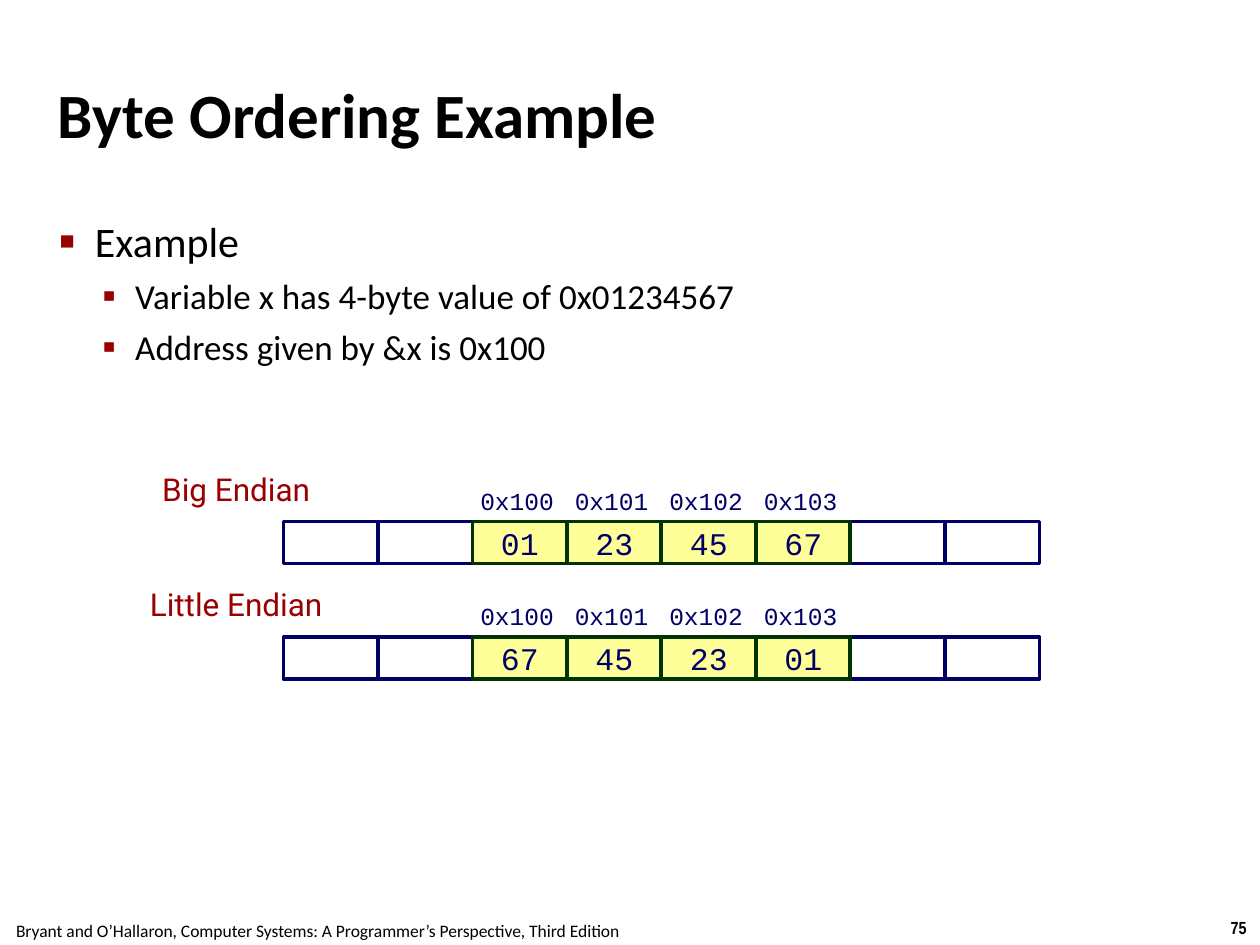
from lxml import etree
from pptx import Presentation
from pptx.dml.color import RGBColor
from pptx.enum.shapes import MSO_SHAPE
from pptx.enum.text import MSO_ANCHOR, MSO_AUTO_SIZE, PP_ALIGN
from pptx.oxml.ns import qn
from pptx.util import Pt

RECTANGLE = MSO_SHAPE.RECTANGLE
TOP, MIDDLE = MSO_ANCHOR.TOP, MSO_ANCHOR.MIDDLE
LEFT, CENTER = PP_ALIGN.LEFT, PP_ALIGN.CENTER
NO_FIT = MSO_AUTO_SIZE.NONE

BLACK = RGBColor(0x00, 0x00, 0x00)
WHITE = RGBColor(0xFF, 0xFF, 0xFF)
NAVY = RGBColor(0x00, 0x00, 0x66)
GREEN = RGBColor(0x00, 0x33, 0x00)
YELLOW = RGBColor(0xFF, 0xFF, 0x99)
BULLET_RED = RGBColor(0x99, 0x00, 0x00)
LABEL_RED = RGBColor(0x98, 0x00, 0x02)

TITLE_FONT = {"name": "Calibri", "size": Pt(36), "bold": True}
ITEM_FONT = {"name": "Calibri", "size": Pt(24)}
SUBITEM_FONT = {"name": "Calibri", "size": Pt(20)}
FOOTER_FONT = {"name": "Calibri", "size": Pt(10)}
NUMBER_FONT = {"name": "Arial Narrow", "size": Pt(10), "bold": True}
LABEL_FONT = {"name": "Roboto", "size": Pt(18)}
ADDRESS_FONT = {"name": "Courier New", "size": Pt(14)}
BYTE_FONT = {"name": "Courier New", "size": Pt(18)}

# Per list level: font, bullet, bullet size in percent, margin, hang, space before
LEVELS = [
    (ITEM_FONT, "■", 60, 20.25, 20.25, 6),
    (SUBITEM_FONT, "▪", 110, 43.25, 18.75, 5),
]
ITEMS = [
    (0, "Example"),
    (1, "Variable x has 4-byte value of 0x01234567"),
    (1, "Address given by &x is 0x100"),
]

CELL_LEFT, CELL_WIDTH, CELL_HEIGHT = 162, 54, 24
ROW_TOP, ROW_PITCH = 298, 66
CELL_COUNT, FIRST_BYTE = 8, 2
ADDRESSES = ["0x100", "0x101", "0x102", "0x103"]
ROWS = [
    ("Big Endian", ["01", "23", "45", "67"]),
    ("Little Endian", ["67", "45", "23", "01"]),
]


def apply_format(target, values):
    for name, value in values.items():
        setattr(target, name, value)


def place(shape, left, top, width, height):
    apply_format(shape, {"left": Pt(left), "top": Pt(top),
                         "width": Pt(width), "height": Pt(height)})


def set_frame(frame, insets, anchor, wrap=True):
    """Set the insets (left, top, right, bottom), anchor and wrapping."""
    left, top, right, bottom = map(Pt, insets)
    apply_format(frame, {
        "margin_left": left, "margin_top": top,
        "margin_right": right, "margin_bottom": bottom,
        "vertical_anchor": anchor, "word_wrap": wrap, "auto_size": NO_FIT})


def write(para, text, font, color, align):
    para.alignment = align
    span = para.add_run()
    span.text = text
    apply_format(span.font, font)
    span.font.color.rgb = color


def set_indent(para, margin, hang):
    properties = para._p.get_or_add_pPr()
    properties.set("marL", str(Pt(margin)))
    properties.set("indent", str(-Pt(hang)))
    return properties


def set_bullet(properties, character, percent):
    color = etree.SubElement(properties, qn("a:buClr"))
    etree.SubElement(color, qn("a:srgbClr"), val=str(BULLET_RED))
    etree.SubElement(properties, qn("a:buSzPct"), val=str(percent * 1000))
    etree.SubElement(properties, qn("a:buFont"), typeface="Arial")
    etree.SubElement(properties, qn("a:buChar"), char=character)


def add_title(page, text):
    title = page.shapes.title
    place(title, 30, 20, 660, 90)
    set_frame(title.text_frame, (3, 3, 3, 3), MIDDLE)
    para = title.text_frame.paragraphs[0]
    write(para, text, TITLE_FONT, BLACK, LEFT)
    set_indent(para, 9.25, 9.25)


def add_list(page, items):
    body = page.placeholders[1]
    place(body, 31, 120, 622, 379)
    frame = body.text_frame
    set_frame(frame, (3, 3, 3, 3), TOP)
    for index, (level, text) in enumerate(items):
        para = frame.add_paragraph() if index else frame.paragraphs[0]
        font, character, percent, margin, hang, space = LEVELS[level]
        write(para, text, font, BLACK, LEFT)
        para.level = level
        para.space_before = Pt(space)
        set_bullet(set_indent(para, margin, hang), character, percent)


def add_text(page, text, bounds, font, color, insets, anchor=TOP, wrap=False):
    box = page.shapes.add_textbox(0, 0, 0, 0)
    place(box, *bounds)
    set_frame(box.text_frame, insets, anchor, wrap)
    para = box.text_frame.paragraphs[0]
    write(para, text, font, color, CENTER)
    return para


def add_cell(page, left, top, fill, line, line_width, text=""):
    cell = page.shapes.add_shape(RECTANGLE, Pt(left), Pt(top),
                                 Pt(CELL_WIDTH), Pt(CELL_HEIGHT))
    cell.shadow.inherit = False
    cell.fill.solid()
    cell.fill.fore_color.rgb = fill
    cell.line.color.rgb = line
    cell.line.width = Pt(line_width)
    if text:
        set_frame(cell.text_frame, (0, 0, 0, 0), MIDDLE, False)
        write(cell.text_frame.paragraphs[0], text, BYTE_FONT, NAVY, CENTER)


def add_memory_row(page, top, label, values):
    """Draw the labelled strip of cells, with the bytes over the middle ones."""
    lefts = [CELL_LEFT + CELL_WIDTH * index for index in range(CELL_COUNT)]
    byte_lefts = lefts[FIRST_BYTE:FIRST_BYTE + len(values)]
    para = add_text(page, label, (66, top - 30, 141, 26), LABEL_FONT,
                    LABEL_RED, (2, 2, 5, 2), wrap=True)
    para.line_spacing = 0.95
    for left in lefts:
        if left not in byte_lefts:
            add_cell(page, left, top, WHITE, NAVY, 2)
    for left, address, value in zip(byte_lefts, ADDRESSES, values):
        add_text(page, address, (left, top - CELL_HEIGHT, CELL_WIDTH, CELL_HEIGHT),
                 ADDRESS_FONT, NAVY, (4, 4, 7, 4), MIDDLE)
        add_cell(page, left, top, YELLOW, GREEN, 2.25, value)


def main():
    deck = Presentation()
    deck.slide_width, deck.slide_height = Pt(720), Pt(540)
    page = deck.slides.add_slide(deck.slide_layouts[1])
    add_text(page, "75", (695.5, 520.5, 24.5, 19.5), NUMBER_FONT, BLACK,
             (7.2, 3.6, 7.2, 3.6))
    add_text(page, "Bryant and O’Hallaron, Computer Systems: "
             "A Programmer’s Perspective, Third Edition",
             (-1.5, 522, 366, 19.5), FOOTER_FONT, BLACK, (7.2, 3.6, 7.2, 3.6))
    add_title(page, "Byte Ordering Example")
    add_list(page, ITEMS)
    for index, (label, values) in enumerate(ROWS):
        add_memory_row(page, ROW_TOP + ROW_PITCH * index, label, values)
    deck.save("out.pptx")


if __name__ == "__main__":
    main()
